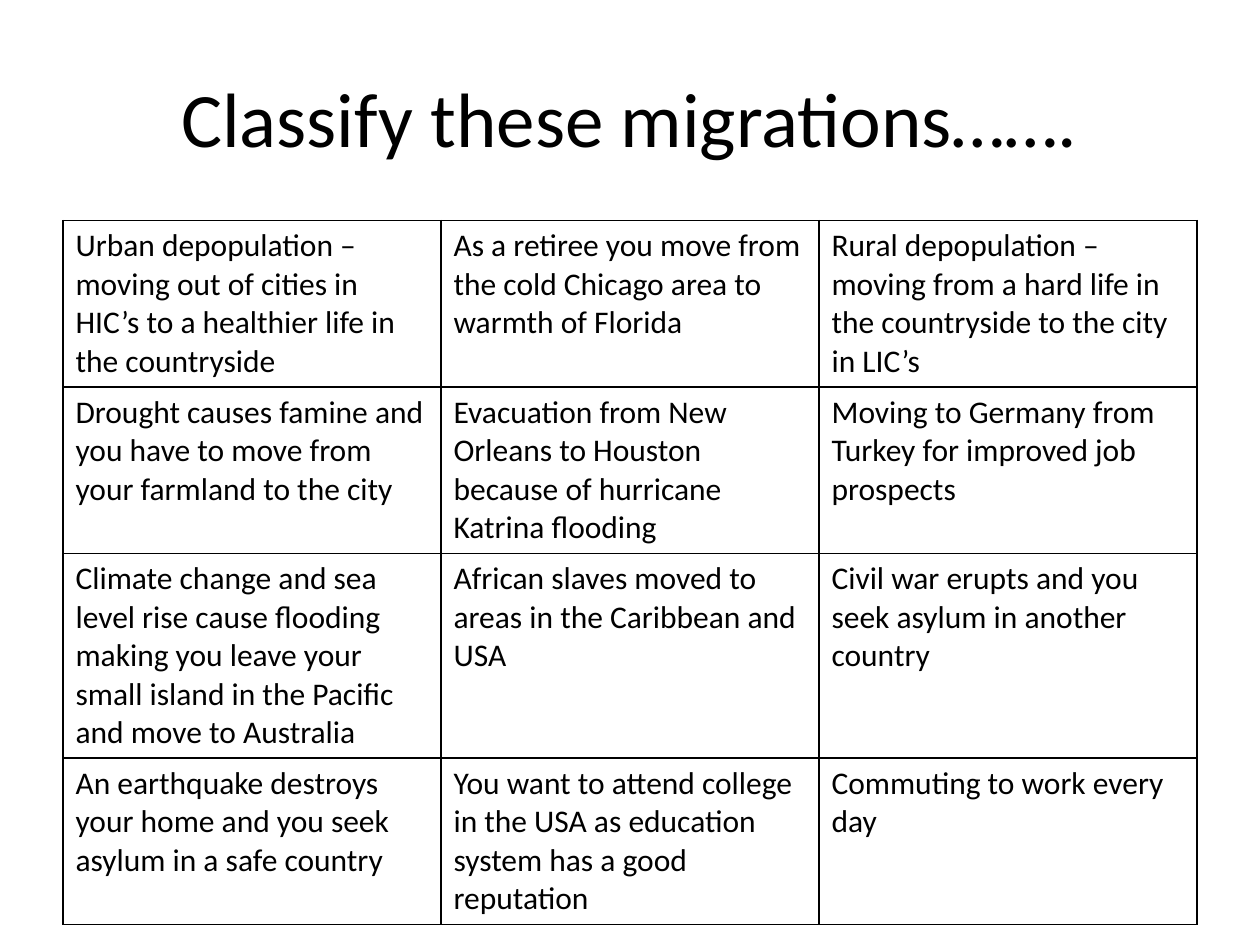
"""Build a slide with a title and a grid of migrations to classify."""
from lxml.etree import SubElement
from pptx import Presentation
from pptx.dml.color import RGBColor
from pptx.enum.text import MSO_ANCHOR, PP_ALIGN
from pptx.oxml.ns import qn
from pptx.util import Inches, Pt

BLACK = "000000"
ROWS = [
    ["Urban depopulation – moving out of cities in HIC’s to a healthier life in the countryside",
     "As a retiree you move from the cold Chicago area to warmth of Florida",
     "Rural depopulation – moving from a hard life in the countryside to the city in LIC’s"],
    ["Drought causes famine and you have to move from your farmland to the city",
     "Evacuation from New Orleans to Houston because of hurricane Katrina flooding",
     "Moving to Germany from Turkey for improved job prospects"],
    ["Climate change and sea level rise cause flooding making you leave your small island "
     "in the Pacific and move to Australia",
     "African slaves moved to areas in the Caribbean and USA",
     "Civil war erupts and you seek asylum in another country"],
    ["An earthquake destroys your home and you seek asylum in a safe country",
     "You want to attend college in the USA as education system has a good reputation",
     "Commuting to work every day"],
]


def write(tf, text, size, color=BLACK):
    tf.text = text
    font = tf.paragraphs[0].runs[0].font
    font.name, font.size = "Calibri", Pt(size)
    font.color.rgb = RGBColor.from_string(color)


def add_borders(cell, color=BLACK, width=1):
    tcPr = cell._tc.get_or_add_tcPr()
    for i, side in enumerate(("lnL", "lnR", "lnT", "lnB")):
        ln = SubElement(tcPr, qn(f"a:{side}"), w=str(Pt(width)))
        fill = SubElement(ln, qn("a:solidFill"))
        SubElement(fill, qn("a:srgbClr"), val=color)
        tcPr.insert(i, ln)


prs = Presentation()
prs.slide_width, prs.slide_height = Inches(10), Inches(7.5)
margin = prs.slide_width // 20
width = prs.slide_width - 2 * margin
s = prs.slides.add_slide(prs.slide_layouts[5])

title = s.shapes.title
title.left, title.top = margin, Inches(0.3)
title.width, title.height = width, Inches(1.25)
tf = title.text_frame
write(tf, "Classify these migrations…….", 44)
tf.vertical_anchor = MSO_ANCHOR.MIDDLE
tf.paragraphs[0].alignment = PP_ALIGN.CENTER

n_rows, n_cols = len(ROWS), len(ROWS[0])
table = s.shapes.add_table(n_rows, n_cols, margin, Inches(1.75),
                           width, n_rows * Inches(0.41)).table
table.first_row = table.horz_banding = False
for r, texts in enumerate(ROWS):
    for c, text in enumerate(texts):
        cell = table.cell(r, c)
        write(cell.text_frame, text, 18)
        cell.fill.background()
        add_borders(cell)

prs.save("out.pptx")
